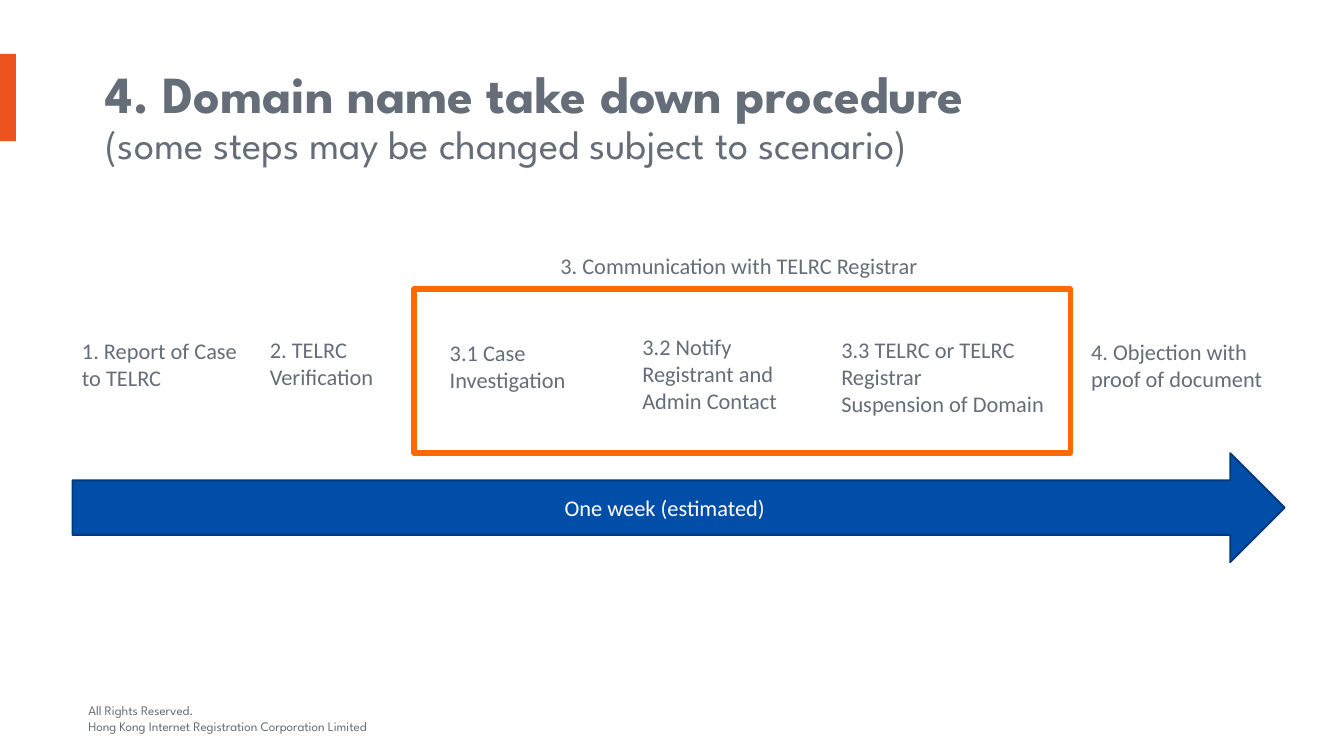
import pptx
import pptx.util
import pptx.dml.color
import pptx.enum.shapes
import pptx.enum.text

Cm = pptx.util.Cm
Pt = pptx.util.Pt
SHAPE = pptx.enum.shapes.MSO_SHAPE
ANCHOR = pptx.enum.text.MSO_ANCHOR

COLORS = {
    "text": "656D78",
    "accent": "ED531F",
    "frame": "FF6900",
    "arrow": "004EA8",
    "arrow edge": "003A7C",
    "white": "FFFFFF",
}


def rgb(name):
    return pptx.dml.color.RGBColor.from_string(COLORS[name])


def add_text(text, left, top, width, height, size=12, font="Calibri", wrap=True):
    box = slide.shapes.add_textbox(Cm(left), Cm(top), Cm(width), Cm(height))
    box.text_frame.word_wrap = wrap
    box.text_frame.text = text
    for paragraph in box.text_frame.paragraphs:
        for run in paragraph.runs:
            run.font.name = font
            run.font.size = Pt(size)
            run.font.color.rgb = rgb("text")
    return box


prs = pptx.Presentation()
prs.slide_width = Cm(25.4)
prs.slide_height = Cm(14.28)
slide = prs.slides.add_slide(prs.slide_layouts[6])

# Footer and accent bar
add_text("All Rights Reserved.\nHong Kong Internet Registration Corporation Limited",
         1.42, 13.15, 6.81, 0.86, size=7, font="League Spartan")
accent = slide.shapes.add_shape(SHAPE.RECTANGLE, Cm(0), Cm(1.02), Cm(0.3), Cm(1.65))
accent.shadow.inherit = False
accent.fill.solid()
accent.fill.fore_color.rgb = rgb("accent")
accent.line.fill.background()

# Title with a lighter second line
title = add_text("4. Domain name take down procedure\v"
                 "(some steps may be changed subject to scenario)",
                 1.75, 1.42, 21.89, 1.65, size=21.6, font="League Spartan")
title.text_frame.vertical_anchor = ANCHOR.MIDDLE
heading = title.text_frame.paragraphs[0]
heading.line_spacing = 0.9
heading.runs[0].font.size = Pt(27.9)
heading.runs[0].font.bold = True

# Steps: text, left, top, width, height, wrap
steps = [
    ("1. Report of Case\nto TELRC", 1.3, 6.25, 3.48, 1.27, False),
    ("2. TELRC\nVerification", 4.85, 6.22, 2.49, 1.27, False),
    ("3. Communication with TELRC Registrar", 10.34, 4.63, 7.6, 0.76, True),
    ("3.1 Case\nInvestigation", 8.25, 6.29, 2.72, 1.27, False),
    ("3.2 Notify Registrant and Admin Contact", 11.89, 6.17, 3.45, 1.8, True),
    ("3.3 TELRC or TELRC Registrar\nSuspension of Domain", 15.65, 6.22, 4.72, 1.8, True),
    ("4. Objection with proof of document", 20.37, 6.27, 4.19, 1.27, True),
]
for text, left, top, width, height, wrap in steps:
    add_text(text, left, top, width, height, wrap=wrap)

# Timeline arrow
timeline = slide.shapes.add_shape(SHAPE.RIGHT_ARROW, Cm(1.37), Cm(8.56), Cm(22.91), Cm(2.06))
timeline.shadow.inherit = False
timeline.fill.solid()
timeline.fill.fore_color.rgb = rgb("arrow")
timeline.line.color.rgb = rgb("arrow edge")
timeline.line.width = Pt(1)
timeline.text_frame.text = "One week (estimated)"
timeline.text_frame.vertical_anchor = ANCHOR.MIDDLE
duration = timeline.text_frame.paragraphs[0]
duration.alignment = pptx.enum.text.PP_ALIGN.CENTER
duration.runs[0].font.name = "Calibri"
duration.runs[0].font.size = Pt(12)
duration.runs[0].font.color.rgb = rgb("white")

# Frame around the steps of stage 3
frame = slide.shapes.add_shape(SHAPE.RECTANGLE, Cm(7.83), Cm(5.46), Cm(12.4), Cm(3.1))
frame.shadow.inherit = False
frame.fill.background()
frame.line.color.rgb = rgb("frame")
frame.line.width = Pt(3)

prs.save("out.pptx")
